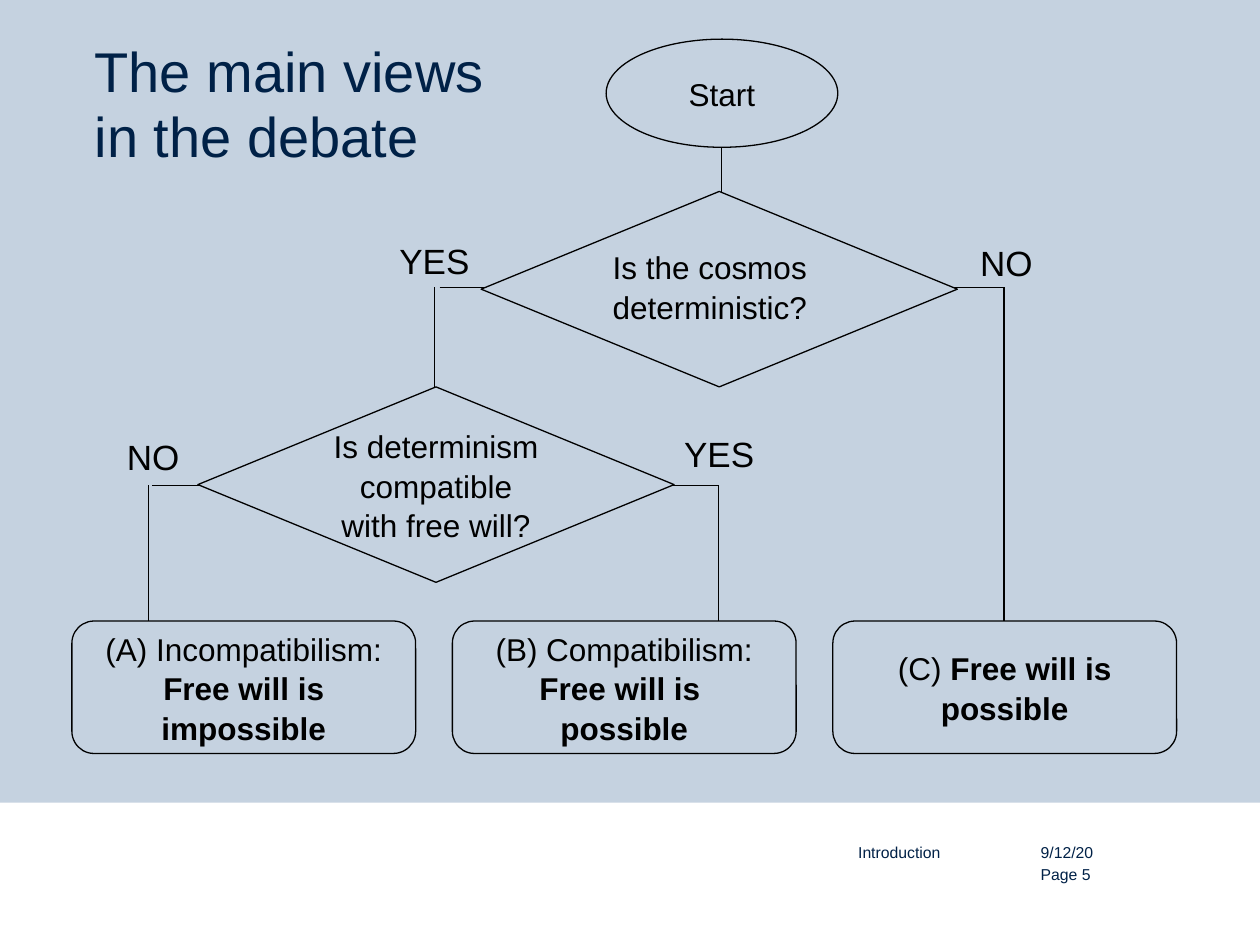
from lxml import etree
from pptx import Presentation
from pptx.dml.color import RGBColor
from pptx.enum.shapes import MSO_CONNECTOR, MSO_SHAPE
from pptx.enum.text import MSO_ANCHOR, PP_ALIGN
from pptx.oxml.ns import qn
from pptx.util import Cm, Pt

LEFT, CENTER = PP_ALIGN.LEFT, PP_ALIGN.CENTER
TOP, MIDDLE = MSO_ANCHOR.TOP, MSO_ANCHOR.MIDDLE
RECTANGLE, OVAL = MSO_SHAPE.RECTANGLE, MSO_SHAPE.OVAL
DIAMOND, ROUNDED = MSO_SHAPE.DIAMOND, MSO_SHAPE.ROUNDED_RECTANGLE
STRAIGHT = MSO_CONNECTOR.STRAIGHT

FONT = "Arial"
BLUE, NAVY, BLACK, WHITE = "C5D2E0", "002147", "000000", "FFFFFF"

TITLE = ["The main views", "in the debate"]
FOOTERS = [
    ("9/12/20", 20.98, 16.94),
    ("Page 5", 20.98, 17.4),
    ("Introduction", 17.3, 16.94),
]
QUESTIONS = [
    ("Is determinism compatible with free will?", 3.99, 7.8, CENTER, MIDDLE),
    ("Is the cosmos deterministic?", 9.7, 3.86, LEFT, TOP),
]
VIEWS = [
    [[("(A) Incompatibilism:", False)], [("Free will is impossible", True)]],
    [[("(B) Compatibilism:", False)], [("Free will is ", True)], [("possible", True)]],
    [[("(C) ", False), ("Free will is possible", True)]],
]
ANSWERS = [
    ("YES", 7.8, 4.67),
    ("NO", 19.51, 4.7),
    ("YES", 13.54, 8.56),
    ("NO", 2.31, 8.61),
]

DIAMOND_SIZE = (9.6, 3.94)
VIEW_LEFT, VIEW_TOP, VIEW_STEP = 1.45, 12.52, 7.67
VIEW_SIZE = (6.93, 2.67)
UPPER, LOWER = 5.79, 9.78
LINES = [
    (14.55, 2.97, 14.55, 4.37),
    (8.86, UPPER, 20.24, UPPER),
    (8.76, UPPER, 8.76, 8.1),
    (20.24, UPPER, 20.24, VIEW_TOP),
    (3.07, LOWER, 14.48, LOWER),
    (3, LOWER, 3, VIEW_TOP),
    (14.48, LOWER, 14.48, VIEW_TOP),
]


def color(value):
    return RGBColor.from_string(value)


def write(box, lines, size, ink=BLACK, align=LEFT, anchor=TOP, spacing=1.05):
    frame = box.text_frame
    frame.vertical_anchor = anchor
    para = frame.paragraphs[0]
    para.alignment = align
    para.line_spacing = spacing
    para.font.name = FONT
    para.font.size = Pt(size)
    para.font.color.rgb = color(ink)
    for index, line in enumerate(lines):
        if index:
            para.add_line_break()
        for text, bold in line:
            span = para.add_run()
            span.text = text
            if bold:
                span.font.bold = True


def plain(*lines):
    return [[(line, False)] for line in lines]


def add_text(page, lines, place, size, ink=BLACK, spacing=1.05, wrap=True):
    box = page.shapes.add_textbox(*map(Cm, place))
    frame = box.text_frame
    frame.word_wrap = wrap
    if wrap:
        frame.margin_left = frame.margin_right = 0
        frame.margin_top = frame.margin_bottom = 0
    write(box, lines, size, ink, spacing=spacing)


def add_shape(page, kind, place, fill=BLUE, outlined=True):
    shape = page.shapes.add_shape(kind, *map(Cm, place))
    shape.shadow.inherit = False
    shape.fill.solid()
    shape.fill.fore_color.rgb = color(fill)
    if outlined:
        shape.line.color.rgb = color(BLACK)
        shape.line.width = Pt(0.75)
    else:
        shape.line.fill.background()
    return shape


def add_line(page, ends):
    line = page.shapes.add_connector(STRAIGHT, *map(Cm, ends))
    line.line.color.rgb = color(BLACK)
    line.line.width = Pt(0.75)
    etree.SubElement(line._element.spPr, qn("a:effectLst"))


def main():
    deck = Presentation()
    deck.slide_width, deck.slide_height = Cm(25.4), Cm(19.05)
    page = deck.slides.add_slide(deck.slide_layouts[6])
    page.background.fill.solid()
    page.background.fill.fore_color.rgb = color(BLUE)

    add_shape(page, RECTANGLE, (0, 16.18, 25.4, 2.87), WHITE, False)
    add_text(page, plain(*TITLE), (1.91, 0.79, 21.59, 2.59), 32, NAVY, Pt(37))
    for text, left, top in FOOTERS:
        add_text(page, plain(text), (left, top, 3.3, 0.7), 9, NAVY, Pt(12))

    for ends in LINES:
        add_line(page, ends)

    start = add_shape(page, OVAL, (12.22, 0.79, 4.67, 2.18))
    write(start, plain("Start"), 18, align=CENTER, anchor=MIDDLE)
    for text, left, top, align, anchor in QUESTIONS:
        diamond = add_shape(page, DIAMOND, (left, top, *DIAMOND_SIZE))
        write(diamond, plain(text), 18, align=align, anchor=anchor)
    for index, lines in enumerate(VIEWS):
        left = VIEW_LEFT + index * VIEW_STEP
        view = add_shape(page, ROUNDED, (left, VIEW_TOP, *VIEW_SIZE))
        write(view, lines, 18, align=CENTER, anchor=MIDDLE)
    for text, left, top in ANSWERS:
        width = 1.93 if text == "YES" else 1.57
        add_text(page, plain(text), (left, top, width, 1.12), 20, wrap=False)

    deck.save("out.pptx")


if __name__ == "__main__":
    main()
